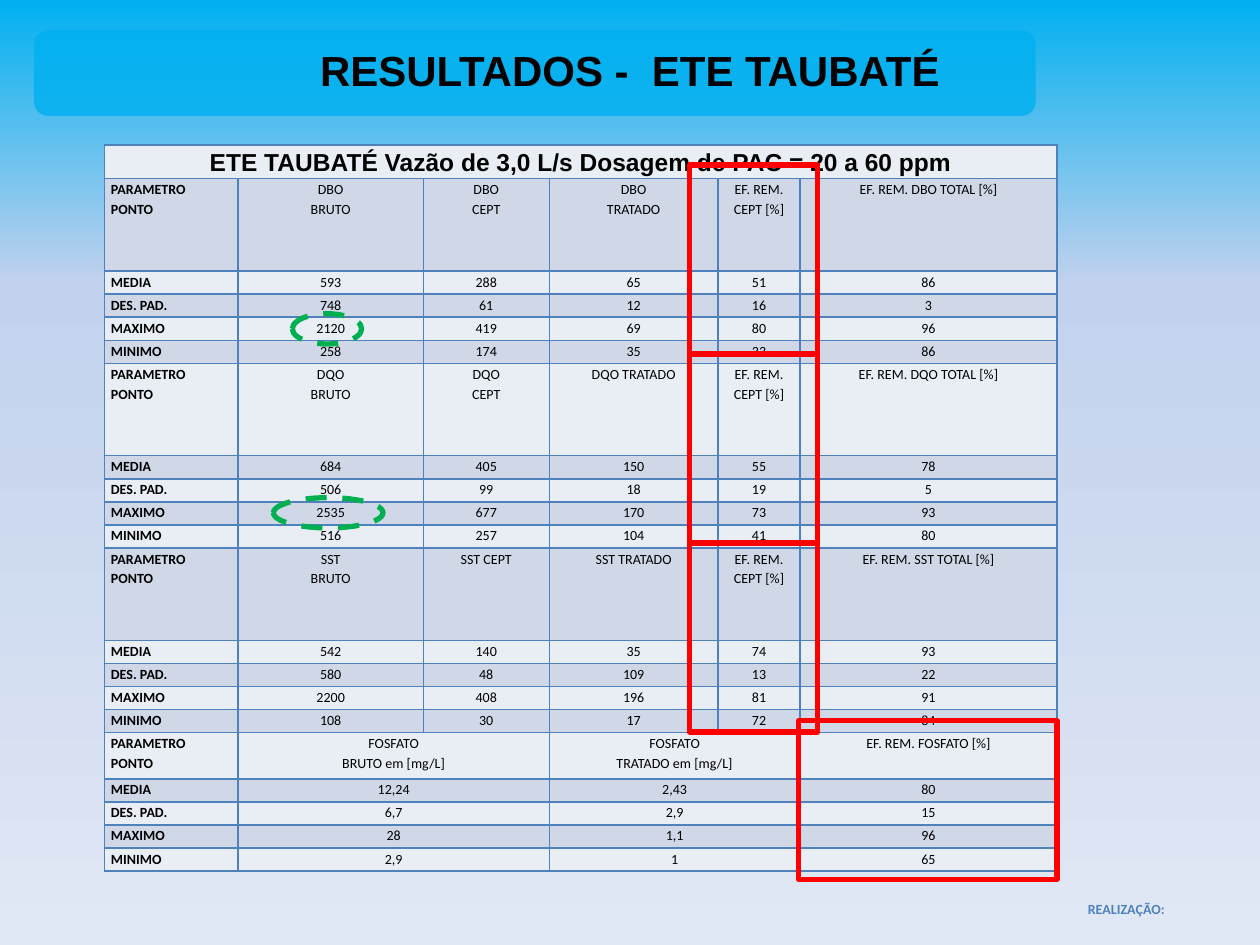
from copy import deepcopy

from lxml import etree
from pptx import Presentation
from pptx.dml.color import RGBColor
from pptx.enum.dml import MSO_LINE
from pptx.enum.shapes import MSO_SHAPE
from pptx.enum.text import PP_ALIGN
from pptx.oxml.ns import qn
from pptx.util import Inches, Pt

CENTER, LEFT = PP_ALIGN.CENTER, PP_ALIGN.LEFT
RECTANGLE, OVAL = MSO_SHAPE.RECTANGLE, MSO_SHAPE.OVAL
ROUNDED = MSO_SHAPE.ROUNDED_RECTANGLE
DASH = MSO_LINE.DASH
BLUE, RED, GREEN, BLACK = "4F81BD", "FF0000", "00B050", "000000"
BANDS = ["E9EDF4", "D0D8E8"]


def rgb(value):
    return RGBColor.from_string(value)


def write(frame, text, font, size, color, bold, align):
    frame.text = text
    for paragraph in frame.paragraphs:
        paragraph.alignment = align
        for run in paragraph.runs:
            run.font.name = font
            run.font.size = Pt(size)
            run.font.bold = bold
            run.font.color.rgb = rgb(color)


prs = Presentation()
prs.slide_width, prs.slide_height = Inches(10), Inches(7.5)
slide = prs.slides.add_slide(prs.slide_layouts[6])
shapes = slide.shapes

# Background gradient, top to bottom
background = slide.background.fill
background.gradient()
background.gradient_angle = 270
stop_list = next(slide.element.iter(qn("a:gsLst")))
stop_list.append(deepcopy(stop_list[0]))
gradient = [(0, "00B0F0"), (0.3, "C2D1ED"), (1, "E1E8F5")]
for stop, (position, color) in zip(background.gradient_stops, gradient):
    stop.position = position
    stop.color.rgb = rgb(color)

# Title banner and footer
banner = shapes.add_shape(ROUNDED, Inches(0.27), Inches(0.24), Inches(7.95), Inches(0.68))
banner.shadow.inherit = False
banner.fill.solid()
banner.fill.fore_color.rgb = rgb("00B0F0")
banner_color = next(banner.element.spPr.iter(qn("a:srgbClr")))
etree.SubElement(banner_color, qn("a:alpha"), val="80000")
banner.line.fill.background()

captions = [
    ("REALIZAÇÃO:", (8.46, 7.1, 0.96, 0.24), "Calibri", 8, BLUE),
    ("RESULTADOS -  ETE TAUBATÉ", (0.5, 0.3, 9, 1.25), "Arial", 24, BLACK),
]
for text, place, font, size, color in captions:
    caption = shapes.add_textbox(*map(Inches, place)).text_frame
    caption.word_wrap = True
    write(caption, text, font, size, color, True, CENTER)

# Results: each section is a header row followed by four statistics
HEADING = "ETE TAUBATÉ Vazão de 3,0 L/s Dosagem de PAC = 20 a 60 ppm"
STATISTICS = ["MEDIA", "DES. PAD.", "MAXIMO", "MINIMO"]
REMOVAL = "EF. REM. CEPT [%]"
sections = [
    (["DBO\nBRUTO", "DBO\nCEPT", "DBO\nTRATADO", REMOVAL, "EF. REM. DBO TOTAL [%]"],
     ["593 288 65 51 86", "748 61 12 16 3", "2120 419 69 80 96", "258 174 35 33 86"]),
    (["DQO\nBRUTO", "DQO\nCEPT", "DQO TRATADO", REMOVAL, "EF. REM. DQO TOTAL [%]"],
     ["684 405 150 55 78", "506 99 18 19 5", "2535 677 170 73 93", "516 257 104 41 80"]),
    (["SST\nBRUTO", "SST CEPT", "SST TRATADO", REMOVAL, "EF. REM. SST TOTAL [%]"],
     ["542 140 35 74 93", "580 48 109 13 22", "2200 408 196 81 91", "108 30 17 72 84"]),
    (["FOSFATO\nBRUTO em [mg/L]", "FOSFATO\nTRATADO em [mg/L]", "EF. REM. FOSFATO [%]"],
     ["12,24 2,43 80", "6,7 2,9 15", "28 1,1 96", "2,9 1 65"]),
]
line_height = Inches(0.55) // 3
rows, heights = [[HEADING]], [Inches(0.19)]
for headers, values in sections:
    rows.append(["PARAMETRO\nPONTO"] + headers)
    rows += [[name] + line.split() for name, line in zip(STATISTICS, values)]
    header_lines = 4 if len(headers) == 5 else 2
    heights += [line_height * header_lines] + [line_height] * 4

widths = [1.06, 1.47, 1, 1.34, 0.65, 2.04]
results = shapes.add_table(len(rows), len(widths), Inches(0.83), Inches(1.15),
                           Inches(sum(widths)), sum(heights)).table
results.first_row = results.horz_banding = False
for column, width in zip(results.columns, widths):
    column.width = Inches(width)

# Columns where the cells of a row start, by number of cells
starts = {1: [0], 4: [0, 1, 3, 5], 6: range(6)}
for r, (texts, height) in enumerate(zip(rows, heights)):
    results.rows[r].height = height
    for c in range(len(widths)):
        cell = results.cell(r, c)
        cell.margin_left = cell.margin_right = Inches(0.05)
        cell.margin_top = cell.margin_bottom = 0
        for side in ("lnL", "lnR", "lnT", "lnB"):
            border = etree.SubElement(cell._tc.get_or_add_tcPr(), qn(f"a:{side}"), w=str(Pt(1)))
            border_fill = etree.SubElement(border, qn("a:solidFill"))
            etree.SubElement(border_fill, qn("a:srgbClr"), val=BLUE)
        cell.fill.solid()
        cell.fill.fore_color.rgb = rgb(BANDS[r % 2])
    columns = list(starts[len(texts)])
    for text, first, following in zip(texts, columns, columns[1:] + [len(widths)]):
        cell = results.cell(r, first)
        if following - first > 1:
            cell.merge(results.cell(r, following - 1))
        font, size = ("Arial", 14) if r == 0 else ("Calibri", 8)
        align = LEFT if first == 0 and r > 0 else CENTER
        write(cell.text_frame, text, font, size, BLACK, first == 0, align)
        for paragraph in cell.text_frame.paragraphs:
            paragraph.line_spacing = 1.15

# Highlights over the removal columns and the peak values
highlights = [(RECTANGLE, RED, (5.47, 1.31 + 1.5 * i, 1.02, 1.5)) for i in range(3)]
highlights += [
    (OVAL, GREEN, (2.32, 2.49, 0.55, 0.24)),
    (OVAL, GREEN, (2.17, 3.95, 0.87, 0.24)),
    (RECTANGLE, RED, (6.34, 5.72, 2.05, 1.26)),
]
for outline, color, place in highlights:
    highlight = shapes.add_shape(outline, *map(Inches, place))
    highlight.shadow.inherit = False
    highlight.fill.background()
    highlight.line.color.rgb = rgb(color)
    highlight.line.width = Pt(3)
    if outline == OVAL:
        highlight.line.dash_style = DASH

prs.save("out.pptx")
